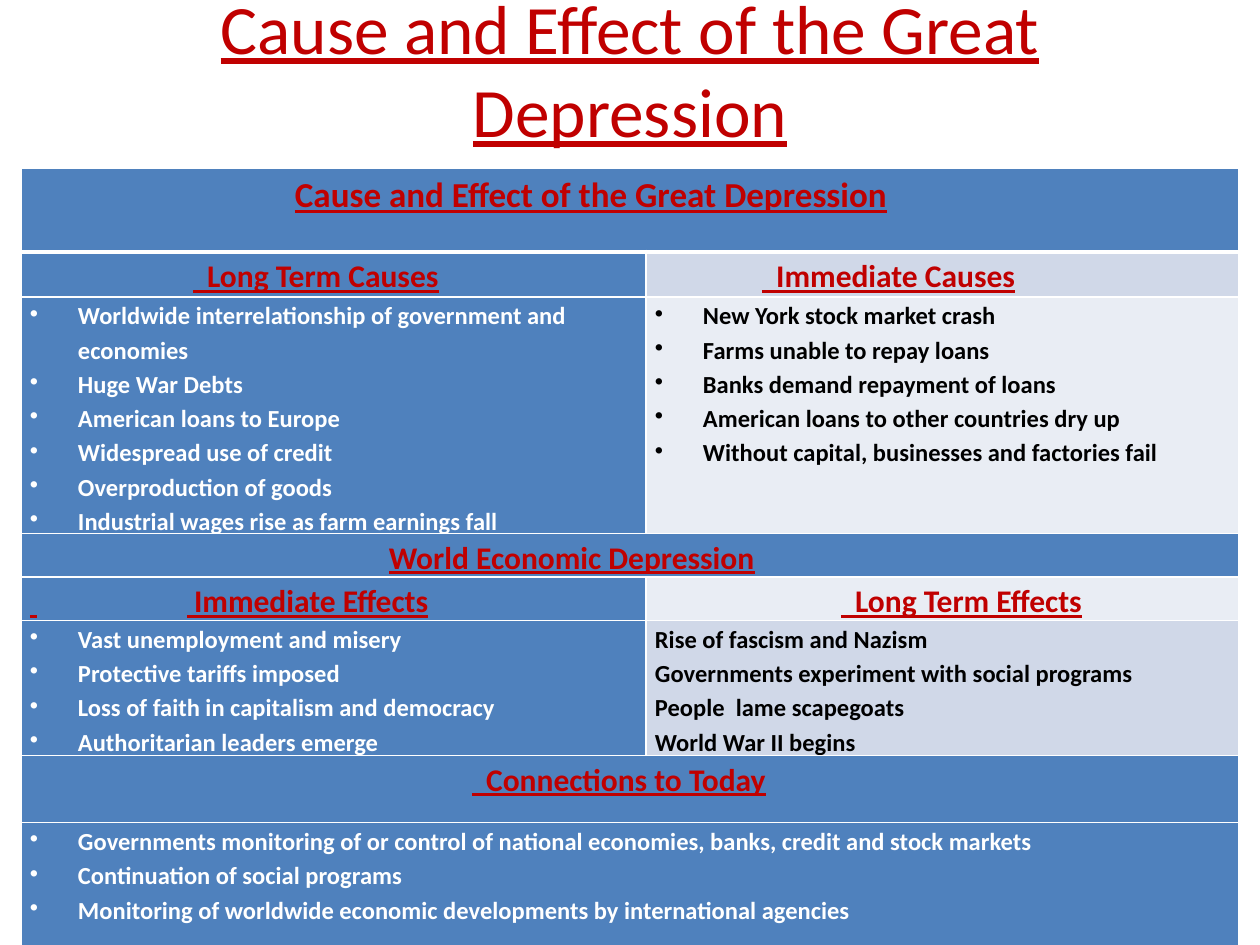
from pptx import Presentation
from pptx.dml.color import RGBColor as RGB
from pptx.enum.text import MSO_ANCHOR as Anchor, PP_ALIGN as Align
from pptx.oxml import parse_xml
from pptx.oxml.ns import nsdecls
from pptx.util import Pt
from dataclasses import dataclass

PX = 914400 / 126


@dataclass
class Theme:
    font: str = "Calibri"
    red: str = "C00000"
    blue: str = "4F81BD"
    mid: str = "D0D8E8"
    pale: str = "E9EDF4"
    white: str = "FFFFFF"
    black: str = "000000"
    title: float = 39.6
    banner: int = 20
    head: int = 18
    body: int = 14


T = Theme()


def px(n):
    return round(n * PX)


def write(para, text, size=T.body, color=T.white, bold=True, line=False):
    run = para.add_run()
    run.text = text
    font = run.font
    font.name, font.size = T.font, Pt(size)
    font.bold, font.underline = bold, line
    font.color.rgb = RGB.from_string(color)


deck = Presentation()
deck.slide_width, deck.slide_height = px(1260), px(945)
slide = deck.slides.add_slide(deck.slide_layouts[6])

# Title
box = slide.shapes.add_textbox(px(63), 0, px(1134), px(136))
frame = box.text_frame
frame.word_wrap = True
frame.vertical_anchor = Anchor.MIDDLE
para = frame.paragraphs[0]
para.alignment = Align.CENTER
write(para, "Cause and Effect of the Great Depression",
      size=T.title, color=T.red, bold=False, line=True)

# Table grid
wide = [625, 593]
high = [84, 45, 218, 39, 39, 123, 67, 173]
table = slide.shapes.add_table(len(high), len(wide), px(21), px(168),
                               px(sum(wide)), px(sum(high))).table
for col, w in zip(table.columns, wide):
    col.width = px(w)
for row, h in zip(table.rows, high):
    row.height = px(h)
for r in (0, 3, 6, 7):
    table.cell(r, 0).merge(table.cell(r, 1))

# Fills, margins and white rules
tints = {1: T.mid, 2: T.pale, 4: T.pale, 5: T.mid}
for r in range(len(high)):
    for c in range(len(wide)):
        cell = table.cell(r, c)
        cell.margin_left = cell.margin_right = px(9)
        cell.margin_top = cell.margin_bottom = 0
        cell.fill.solid()
        tint = tints.get(r, T.blue) if c else T.blue
        cell.fill.fore_color.rgb = RGB.from_string(tint)
        props = cell._tc.get_or_add_tcPr()
        for i, side in enumerate("LRTB"):
            thick = (r, side) in ((0, "B"), (1, "T"))
            props.insert(i, parse_xml(
                f'<a:ln{side} {nsdecls("a")} w="{Pt(3 if thick else 1)}"><a:solidFill>'
                f'<a:srgbClr val="{T.white}"/></a:solidFill></a:ln{side}>'))

# Headings: row, column, tab stop, text, size, lead text, lead colour
heads = [
    (0, 0, 265, "Cause and Effect of the Great Depression", T.banner, "", T.red),
    (1, 0, 163, "  Long Term Causes", T.head, "", T.red),
    (1, 1, 107, "  Immediate Causes", T.head, "", T.red),
    (3, 0, 359, "World Economic Depression", T.head, "\t", T.white),
    (4, 0, 157, " Immediate Effects", T.head, " ", T.red),
    (4, 1, 186, "  Long Term Effects", T.head, "", T.red),
    (6, 0, 442, "  Connections to Today", T.head, "", T.red),
]
for r, c, stop, text, size, lead, tone in heads:
    para = table.cell(r, c).text_frame.paragraphs[0]
    para.line_spacing = 1.15
    para._p.get_or_add_pPr().append(parse_xml(
        f'<a:tabLst {nsdecls("a")}><a:tab pos="{px(stop)}" algn="l"/></a:tabLst>'))
    if lead:
        write(para, lead, size=size, color=tone, line=True)
    if lead != "\t":
        write(para, "\t", size=size, color=T.red)
    write(para, text, size=size, color=T.red, line=True)

# Lists: row, column, colour, bulleted, lines
lists = [
    (2, 0, T.white, True, [
        "Worldwide interrelationship of government and economies",
        "Huge War Debts",
        "American loans to Europe",
        "Widespread use of credit",
        "Overproduction of goods",
        "Industrial wages rise as farm earnings fall"]),
    (2, 1, T.black, True, [
        "New York stock market crash",
        "Farms unable to repay loans",
        "Banks demand repayment of loans",
        "American loans to other countries dry up",
        "Without capital, businesses and factories fail"]),
    (5, 0, T.white, True, [
        "Vast unemployment and misery",
        "Protective tariffs imposed",
        "Loss of faith in capitalism and democracy",
        "Authoritarian leaders emerge"]),
    (5, 1, T.black, False, [
        "Rise of fascism and Nazism",
        "Governments experiment with social programs",
        "People  lame scapegoats",
        "World War II begins"]),
    (7, 0, T.white, True, [
        "Governments monitoring of or control of national economies, "
        "banks, credit and stock markets",
        "Continuation of social programs",
        "Monitoring of worldwide economic developments by international agencies"]),
]
for r, c, color, dots, lines in lists:
    frame = table.cell(r, c).text_frame
    for i, text in enumerate(lines):
        para = frame.add_paragraph() if i else frame.paragraphs[0]
        para.line_spacing = 1.15
        if dots:
            props = para._p.get_or_add_pPr()
            props.set("marL", str(px(48)))
            props.set("indent", str(-px(48)))
            props.append(parse_xml(f'<a:buChar {nsdecls("a")} char="•"/>'))
        write(para, text, color=color)

deck.save("out.pptx")
